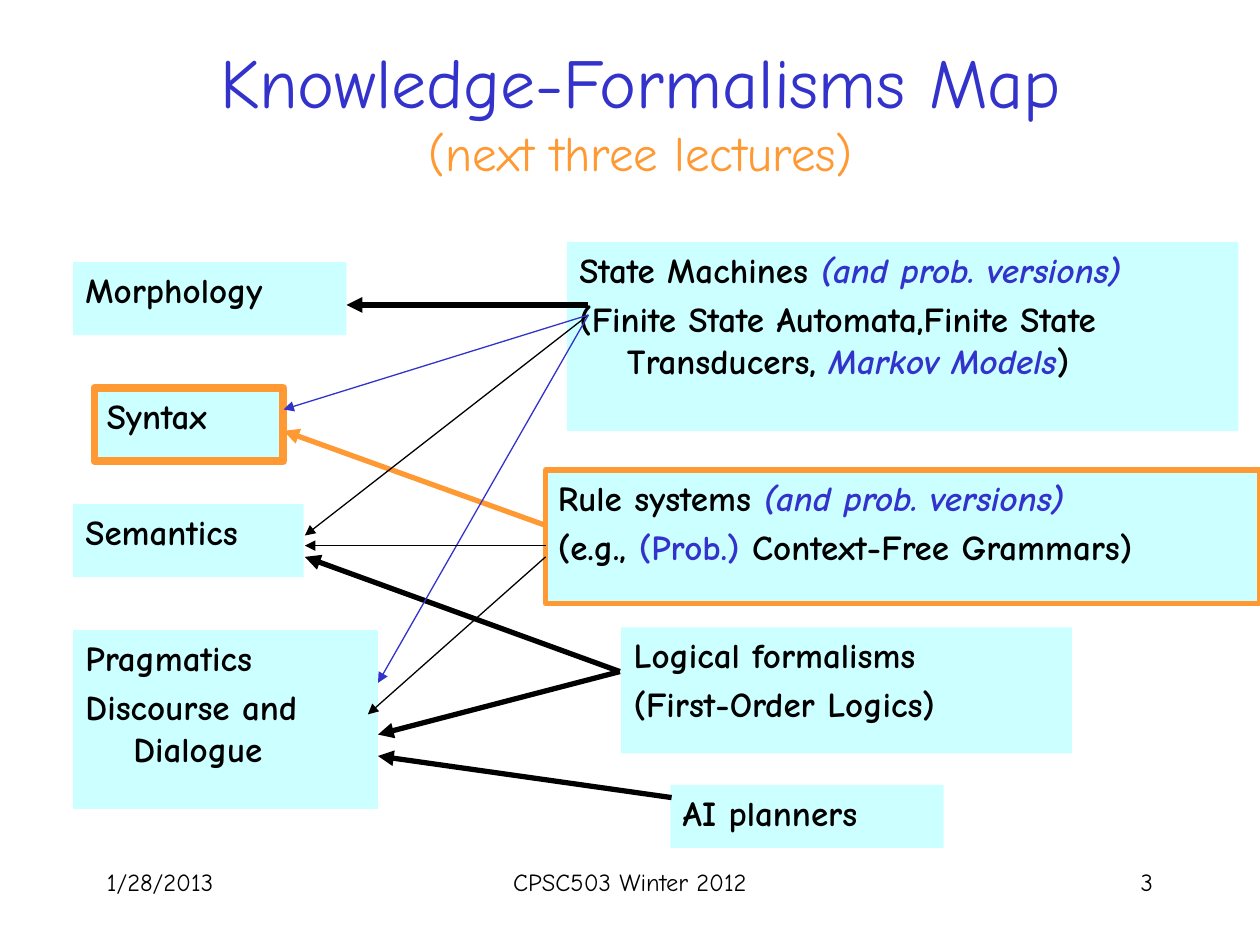
from dataclasses import dataclass

from lxml import etree
from pptx import Presentation
from pptx.dml.color import RGBColor
from pptx.enum import shapes, text
from pptx.oxml import ns
from pptx.util import Inches, Pt


@dataclass(frozen=True)
class Theme:
    font: str = "Comic Neue"
    black: str = "000000"
    blue: str = "3333CC"
    orange: str = "FF9933"
    panel: str = "CCFFFF"
    title_size: int = 40
    subtitle_size: int = 28
    body_size: int = 20
    footer_size: int = 14
    thin: float = 0.75
    thick: float = 3
    frame: float = 4.5


THEME = Theme()
LEFT, CENTER, RIGHT = text.PP_ALIGN.LEFT, text.PP_ALIGN.CENTER, text.PP_ALIGN.RIGHT


def add_run(paragraph, words, size, color=THEME.black, bold=False, italic=False):
    run = paragraph.add_run()
    run.text = words
    font = run.font
    font.name, font.size = THEME.font, Pt(size)
    font.bold, font.italic = bold, italic
    font.color.rgb = RGBColor.from_string(color)


def add_text_box(slide, box, alignment, anchor=text.MSO_ANCHOR.TOP):
    """Add an empty wrapped text box and return its first paragraph."""
    frame = slide.shapes.add_textbox(*map(Inches, box)).text_frame
    frame.word_wrap = True
    frame.vertical_anchor = anchor
    paragraph = frame.paragraphs[0]
    paragraph.alignment = alignment
    return paragraph


def add_title(slide, box):
    paragraph = add_text_box(slide, box, CENTER, text.MSO_ANCHOR.MIDDLE)
    add_run(paragraph, "Knowledge-Formalisms Map", THEME.title_size, THEME.blue)
    paragraph.add_line_break()
    add_run(paragraph, "(next three lectures)", THEME.subtitle_size, THEME.orange)


def add_footer(slide, box):
    left, top, width, height = box
    side, middle = 2.08, 3.17
    parts = [
        ("1/28/2013", left, side, LEFT),
        ("CPSC503 Winter 2012", left + (width - middle) / 2, middle, CENTER),
        ("3", left + width - side, side, RIGHT),
    ]
    for words, x, part_width, alignment in parts:
        paragraph = add_text_box(slide, (x, top, part_width, height), alignment)
        add_run(paragraph, words, THEME.footer_size)


def add_panel(slide, box, paragraphs, border=None):
    """Add a filled box; each paragraph is a list of (words, color, italic)."""
    shape = slide.shapes.add_shape(shapes.MSO_SHAPE.RECTANGLE, *map(Inches, box))
    shape.shadow.inherit = False
    shape.fill.solid()
    shape.fill.fore_color.rgb = RGBColor.from_string(THEME.panel)
    if border:
        shape.line.color.rgb = RGBColor.from_string(THEME.orange)
        shape.line.width = Pt(border)
    else:
        shape.line.fill.background()
    frame = shape.text_frame
    frame.word_wrap = True
    frame.vertical_anchor = text.MSO_ANCHOR.TOP
    for index, runs in enumerate(paragraphs):
        paragraph = frame.add_paragraph() if index else frame.paragraphs[0]
        paragraph.alignment = LEFT
        paragraph.space_before = Pt(THEME.body_size * 0.2)
        properties = paragraph._p.get_or_add_pPr()
        properties.set("marL", str(Inches(0.38)))
        properties.set("indent", str(Inches(-0.38)))
        for words, color, italic in runs:
            add_run(paragraph, words, THEME.body_size, color, True, italic)


def add_arrow(slide, start, end, color, width):
    arrow = slide.shapes.add_connector(
        shapes.MSO_CONNECTOR.STRAIGHT, *map(Inches, start + end))
    arrow.line.color.rgb = RGBColor.from_string(color)
    arrow.line.width = Pt(width)
    line = arrow.line._get_or_add_ln()
    etree.SubElement(line, ns.qn("a:tailEnd"), type="triangle")
    etree.SubElement(arrow._element.spPr, ns.qn("a:effectLst"))


def plain(words):
    return (words, THEME.black, False)


def emphasis(words):
    return (words, THEME.blue, True)


def add_knowledge(slide, left):
    """Place the column of linguistic knowledge levels."""
    add_panel(slide, (left, 2.08, 2.17, 0.58), [[plain("Morphology")]])
    add_panel(slide, (left + 0.17, 3.08, 1.5, 0.58), [[plain("Syntax")]], THEME.frame)
    add_panel(slide, (left, 4, 1.83, 0.58), [[plain("Semantics")]])
    add_panel(slide, (left, 5, 2.42, 1.42),
              [[plain("Pragmatics")], [plain("Discourse and Dialogue")]])


def add_formalisms(slide):
    versions = emphasis("(and prob. versions)")
    add_panel(slide, (4.93, 4.98, 3.58, 1),
              [[plain("Logical formalisms")], [plain("(First-Order Logics)")]])
    add_panel(slide, (4.33, 3.73, 5.67, 1.06), [
        [plain("Rule systems "), versions],
        [plain("(e.g., "), ("(Prob.)", THEME.blue, False),
         plain(" Context-Free Grammars)")],
    ], THEME.thick)
    add_panel(slide, (4.5, 1.92, 5.33, 1.5), [
        [plain("State Machines "), versions],
        [plain("(Finite State Automata,Finite State Transducers, "),
         emphasis("Markov Models"), plain(")")],
    ])
    add_panel(slide, (5.32, 6.23, 2.17, 0.5), [[plain("AI planners")]])


def add_arrows(slide):
    """Link each formalism to the knowledge it models."""
    machines, logics = (4.67, 2.5), (4.92, 5.33)
    arrows = [
        ((4.67, 2.42), (2.75, 2.42), THEME.black, THEME.thick),
        ((4.33, 4.17), (2.25, 3.42), THEME.orange, THEME.thick),
        (logics, (2.42, 4.42), THEME.black, THEME.thick),
        (logics, (3, 5.83), THEME.black, THEME.thick),
        (machines, (2.42, 4.25), THEME.black, THEME.thin),
        (machines, (3, 5.42), THEME.blue, THEME.thin),
        ((4.33, 4.33), (2.42, 4.33), THEME.black, THEME.thin),
        ((4.33, 4.42), (2.92, 5.67), THEME.black, THEME.thin),
        ((5.33, 6.33), (3, 6), THEME.black, THEME.thick),
        (machines, (2.25, 3.25), THEME.blue, THEME.thin),
    ]
    for arrow in arrows:
        add_arrow(slide, *arrow)


def main():
    presentation = Presentation()
    presentation.slide_width, presentation.slide_height = Inches(10), Inches(7.5)
    slide = presentation.slides.add_slide(presentation.slide_layouts[6])
    add_footer(slide, (0.75, 6.83, 8.5, 0.5))
    add_title(slide, (1, 0.25, 8.17, 1.25))
    add_formalisms(slide)
    add_knowledge(slide, 0.58)
    add_arrows(slide)
    presentation.save("out.pptx")


if __name__ == "__main__":
    main()
